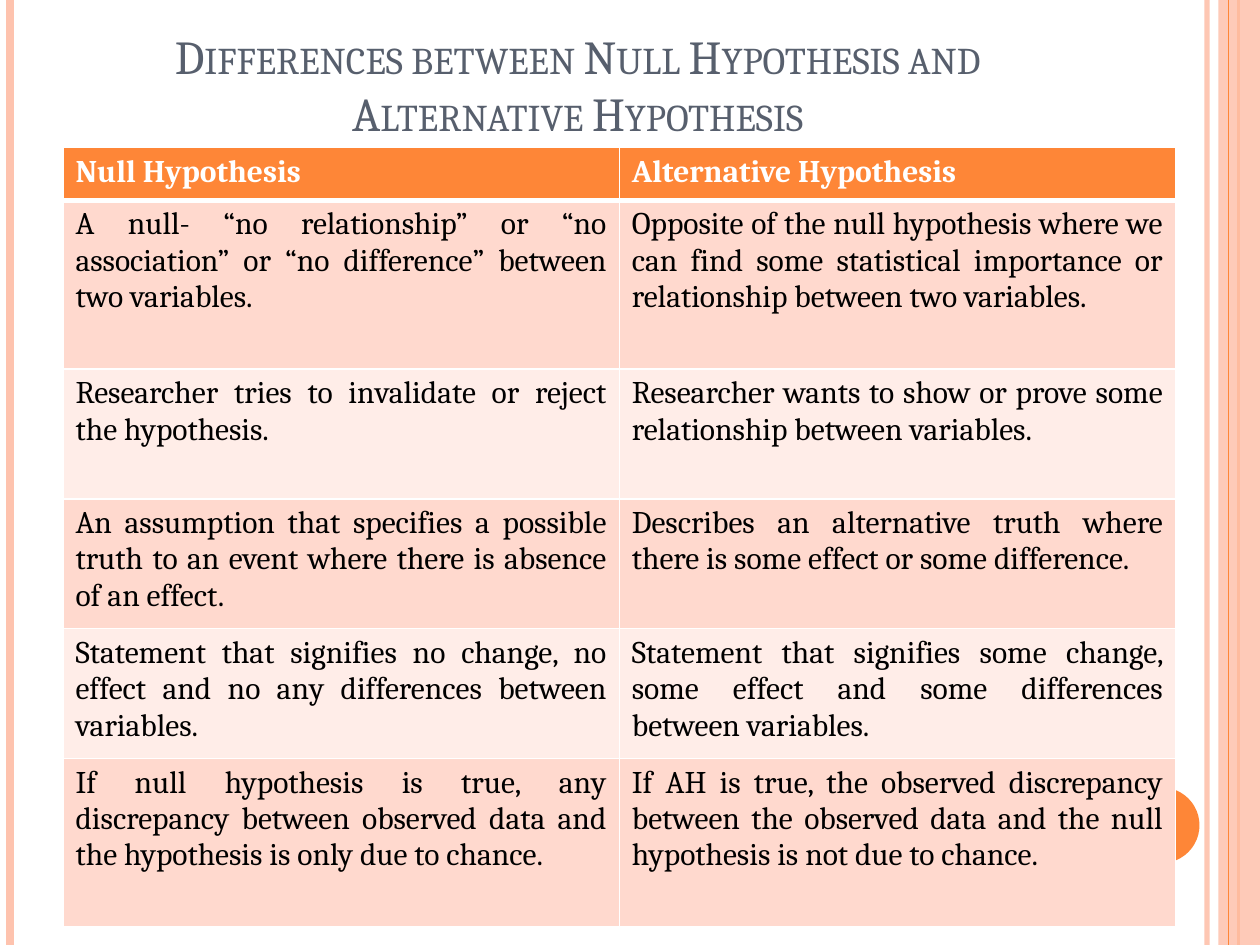
from lxml.etree import SubElement
from pptx import Presentation
from pptx.dml.color import RGBColor
from pptx.enum.shapes import MSO_CONNECTOR, MSO_SHAPE
from pptx.enum.text import MSO_ANCHOR, MSO_AUTO_SIZE, PP_ALIGN
from pptx.oxml.ns import qn
from pptx.util import Inches, Pt

WIDTH, HEIGHT = 10, 7.5
ORANGE, PEACH, SLATE = "FE8637", "FEC3AE", "575F6D"
BANDS = ("FFD9CE", "FFEDE8")
WHITE, BLACK = "FFFFFF", "000000"

TITLE = "Differences between Null Hypothesis and Alternative Hypothesis"
COMPARISON = [
    ("Null Hypothesis", "Alternative Hypothesis"),
    ("A null- “no relationship” or “no association” or “no difference” between two variables.",
     "Opposite of the null hypothesis where we can find some statistical importance or "
     "relationship between two variables."),
    ("Researcher tries to invalidate or reject the hypothesis.",
     "Researcher wants to show or prove some relationship between variables."),
    ("An assumption that specifies a possible truth to an event where there is absence of an effect.",
     "Describes an alternative truth where there is some effect or some difference."),
    ("Statement that signifies no change, no effect and no any differences between variables.",
     "Statement that signifies some change, some effect and some differences between variables."),
    ("If null hypothesis is true, any discrepancy between observed data and the hypothesis "
     "is only due to chance.",
     "If AH is true, the observed discrepancy between the observed data and the null "
     "hypothesis is not due to chance."),
]
ROW_HEIGHTS = (0.42, 1.34, 1.03, 1.03, 1.03, 1.34)
# x, colour, width in points, opacity in percent
RAILS = [(9.58, PEACH, 3, 93), (0.08, PEACH, 4.5, 100), (9.83, ORANGE, 1.5, 100)]
INNER_RAIL = (9.75, ORANGE, 0.75, 100)


def rgb(color):
    return RGBColor.from_string(color)


def box(*lengths):
    return [Inches(length) for length in lengths]


def set_opacity(fill_parent, percent):
    color = fill_parent.find(".//" + qn("a:srgbClr"))
    SubElement(color, qn("a:alpha"), val=str(percent * 1000))


def format_font(font, color, **values):
    font.color.rgb = rgb(color)
    for name, value in {"name": "Cambria", **values}.items():
        setattr(font, name, value)


def add_rail(slide, x, color, width, opacity):
    rail = slide.shapes.add_connector(MSO_CONNECTOR.STRAIGHT, *box(x, 0, x, HEIGHT))
    rail.line.color.rgb = rgb(color)
    rail.line.width = Pt(width)
    properties = rail._element.spPr
    if opacity < 100:
        set_opacity(properties, opacity)
    SubElement(properties, qn("a:effectLst"))


def add_plain_shape(slide, kind, place, color):
    shape = slide.shapes.add_shape(kind, *box(*place))
    shape.shadow.inherit = False
    shape.fill.solid()
    shape.fill.fore_color.rgb = rgb(color)
    shape.line.fill.background()
    return shape


def add_decoration(slide):
    for rail in RAILS:
        add_rail(slide, *rail)
    band = add_plain_shape(slide, MSO_SHAPE.RECTANGLE, (9.67, 0, 0.33, HEIGHT), PEACH)
    set_opacity(band._element.spPr, 87)
    add_rail(slide, *INNER_RAIL)
    add_plain_shape(slide, MSO_SHAPE.OVAL, (8.92, 6.25, 0.6, 0.6), ORANGE)


def fill_title(slide):
    title = slide.shapes.title
    title.left, title.top, title.width, title.height = box(0.5, 0.3, 8.17, 0.87)
    frame = title.text_frame
    frame.text = TITLE
    frame.word_wrap = True
    frame.auto_size = MSO_AUTO_SIZE.NONE
    frame.vertical_anchor = MSO_ANCHOR.BOTTOM
    paragraph = frame.paragraphs[0]
    paragraph.alignment = PP_ALIGN.CENTER
    run = paragraph.runs[0]
    format_font(run.font, SLATE, size=Pt(27))
    run.font._element.set("cap", "small")


def set_borders(cell, bottom):
    """Draw white borders; they must precede the fill in the cell's XML."""
    properties = cell._tc.get_or_add_tcPr()
    for side, width in {"L": 1, "R": 1, "T": 1, "B": bottom}.items():
        border = SubElement(properties, qn("a:ln" + side), w=str(Pt(width)))
        SubElement(SubElement(border, qn("a:solidFill")), qn("a:srgbClr"), val=WHITE)


def format_cell(cell, text, row):
    header = row == 0
    set_borders(cell, 3 if header else 1)
    cell.fill.solid()
    cell.fill.fore_color.rgb = rgb(ORANGE if header else BANDS[(row - 1) % 2])
    cell.text = text
    paragraph = cell.text_frame.paragraphs[0]
    paragraph.alignment = PP_ALIGN.LEFT if header else PP_ALIGN.JUSTIFY
    format_font(paragraph.runs[0].font, WHITE if header else BLACK, size=Pt(18), bold=header)


def add_comparison(slide):
    table = slide.shapes.add_table(len(COMPARISON), 2, *box(0.5, 1.17, 8.83, 6.17)).table
    for row, (texts, height) in enumerate(zip(COMPARISON, ROW_HEIGHTS)):
        table.rows[row].height = Inches(height)
        for column, text in enumerate(texts):
            format_cell(table.cell(row, column), text, row)


def main():
    deck = Presentation()
    deck.slide_width, deck.slide_height = box(WIDTH, HEIGHT)
    slide = deck.slides.add_slide(deck.slide_layouts[5])
    add_decoration(slide)
    fill_title(slide)
    add_comparison(slide)
    deck.save("out.pptx")


if __name__ == "__main__":
    main()
